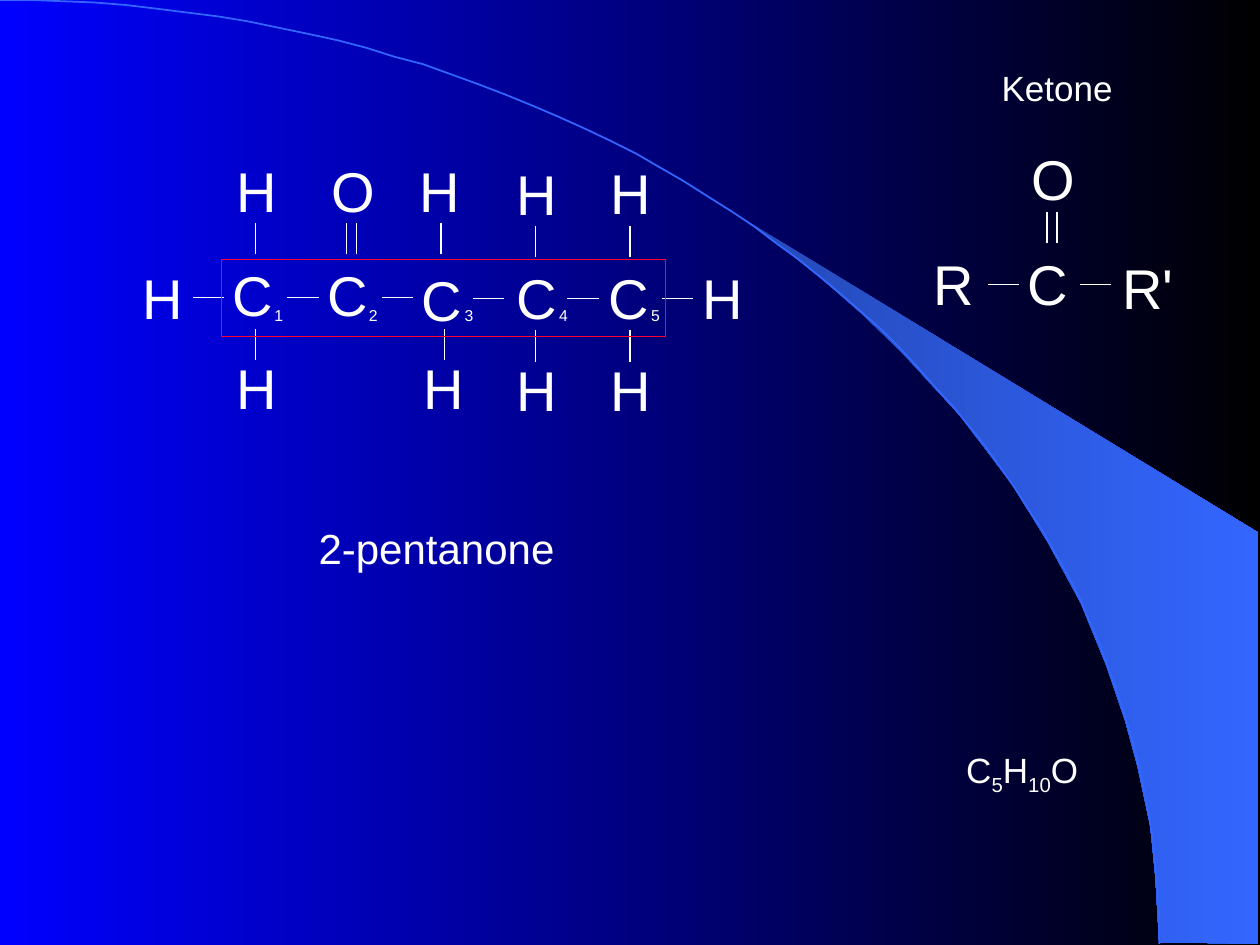
from lxml.etree import SubElement
from pptx import Presentation
from pptx.dml.color import RGBColor
from pptx.enum.shapes import MSO_CONNECTOR, MSO_SHAPE
from pptx.enum.text import MSO_AUTO_SIZE
from pptx.oxml.ns import qn
from pptx.util import Emu, Pt

PX = 9144  # 100 px to the inch
FONT = "Arial"
WHITE = RGBColor(0xFF, 0xFF, 0xFF)
RED = RGBColor(0xFF, 0x00, 0x33)
BLUE = RGBColor(0x00, 0x00, 0xFF)
BLACK = RGBColor(0x00, 0x00, 0x00)
SKY = RGBColor(0x33, 0x66, 0xFF)
DEEP_SKY = RGBColor(0x24, 0x49, 0xB6)

# Content: labels as (text, left, top, width, height, points)
CAPTIONS = [
    ("2-pentanone", 243, 410, 208, 50, 24),
    ("Ketone", 785, 48, 108, 43, 20),
]
FORMULA = [("C", False), ("5", True), ("H", False), ("10", True), ("O", False)]
FORMULA_BOX = (757, 589, 112, 43)

# Atoms as (symbol, left, top)
PENTANONE_ATOMS = [
    ("H", 178, 119), ("O", 253, 119), ("H", 323, 119), ("H", 400, 122), ("H", 475, 121),
    ("H", 103, 204), ("C", 175, 202), ("C", 250, 202), ("C", 325, 206),
    ("C", 400, 204), ("C", 473, 204), ("H", 548, 204),
    ("H", 178, 276), ("H", 326, 276), ("H", 400, 277), ("H", 475, 277),
]
KETONE_ATOMS = [("O", 809, 110), ("R", 731, 193), ("C", 806, 193), ("R'", 881, 196)]
ATOM_WIDTHS = {"H": 52, "C": 52, "R": 52, "O": 55, "R'": 61}
ATOM_HEIGHT = 63

# Bonds as (left, top); all have the same length
BOND = 25
LEVEL_BONDS = [
    (153, 236), (228, 236), (303, 236), (375, 237), (450, 237), (525, 237),
    (784, 226), (857, 226),
]
UPRIGHT_BONDS = [
    (203, 177), (275, 177), (283, 177), (350, 177), (425, 179), (500, 179),
    (203, 261), (353, 261), (425, 262), (500, 262),
    (831, 168), (839, 168),
]

# Carbon chain frame and the left edges of its numbers
CHAIN_FRAME = (176, 206, 352, 61)
NUMBER_LEFTS = [208, 283, 359, 434, 507]
NUMBER_TOP = 238

# Backdrop
WEDGE = [
    (920, 748), (999, 749), (999, 423), (589, 173), (624, 199), (653, 222),
    (685, 250), (716, 280), (762, 330), (803, 384), (832, 431), (858, 479),
    (878, 528), (893, 572), (903, 609), (913, 656), (917, 696),
]
ARC_CONTROLS = [(0, 0), (508, 0), (920, 335), (920, 749)]
ARC_STEPS = 60


def px(*lengths):
    return [Emu(length * PX) for length in lengths]


def paint_gradient(fill, start, end):
    fill.gradient()
    fill.gradient_angle = 0
    for stop, color, position in zip(fill.gradient_stops, (start, end), (0, 1)):
        stop.color.rgb = color
        stop.position = position


def bezier(controls, t):
    weights = ((1 - t) ** 3, 3 * t * (1 - t) ** 2, 3 * t * t * (1 - t), t ** 3)
    return tuple(sum(w * point[axis] for w, point in zip(weights, controls))
                 for axis in (0, 1))


def add_outline(shapes, points, close):
    builder = shapes.build_freeform(*points[0], scale=PX)
    builder.add_line_segments(points[1:], close=close)
    outline = builder.convert_to_shape()
    outline.shadow.inherit = False
    return outline


def add_label(shapes, pieces, left, top, width, height, points):
    label = shapes.add_textbox(*px(left, top, width, height))
    frame = label.text_frame
    frame.word_wrap = False
    frame.auto_size = MSO_AUTO_SIZE.SHAPE_TO_FIT_TEXT
    for text, lowered in pieces:
        run = frame.paragraphs[0].add_run()
        run.text = text
        run.font.name = FONT
        run.font.size = Pt(points)
        run.font.color.rgb = WHITE
        if lowered:
            run._r.get_or_add_rPr().set("baseline", "-25000")


def add_bond(shapes, left, top, run, rise):
    bond = shapes.add_connector(
        MSO_CONNECTOR.STRAIGHT, *px(left, top + rise, left + run, top))
    bond.line.color.rgb = WHITE
    bond.line.width = Pt(0.75)
    SubElement(bond._element.spPr, qn("a:effectLst"))


def main():
    deck = Presentation()
    deck.slide_width, deck.slide_height = px(1000, 750)
    slide = deck.slides.add_slide(deck.slide_layouts[6])
    shapes = slide.shapes

    # Backdrop: gradient, wedge and arc
    paint_gradient(slide.background.fill, BLUE, BLACK)
    wedge = add_outline(shapes, WEDGE, close=True)
    paint_gradient(wedge.fill, DEEP_SKY, SKY)
    wedge.line.fill.background()
    arc_points = [bezier(ARC_CONTROLS, step / ARC_STEPS)
                  for step in range(ARC_STEPS + 1)]
    arc = add_outline(shapes, arc_points, close=False)
    arc.fill.background()
    arc.line.color.rgb = SKY
    arc.line.width = Pt(1)

    # Both molecules
    for symbol, left, top in PENTANONE_ATOMS + KETONE_ATOMS:
        add_label(shapes, [(symbol, False)], left, top,
                  ATOM_WIDTHS[symbol], ATOM_HEIGHT, 32)
    for left, top in LEVEL_BONDS:
        add_bond(shapes, left, top, BOND, 0)
    for left, top in UPRIGHT_BONDS:
        add_bond(shapes, left, top, 0, BOND)

    # Captions and formula
    for text, *place in CAPTIONS:
        add_label(shapes, [(text, False)], *place)
    add_label(shapes, FORMULA, *FORMULA_BOX, 20)

    # Numbered carbon chain
    chain = shapes.add_shape(MSO_SHAPE.RECTANGLE, *px(*CHAIN_FRAME))
    chain.shadow.inherit = False
    chain.fill.background()
    chain.line.color.rgb = RED
    chain.line.width = Pt(0.75)
    for number, left in enumerate(NUMBER_LEFTS, start=1):
        add_label(shapes, [(str(number), False)], left, NUMBER_TOP, 27, 25, 9)

    deck.save("out.pptx")


if __name__ == "__main__":
    main()
